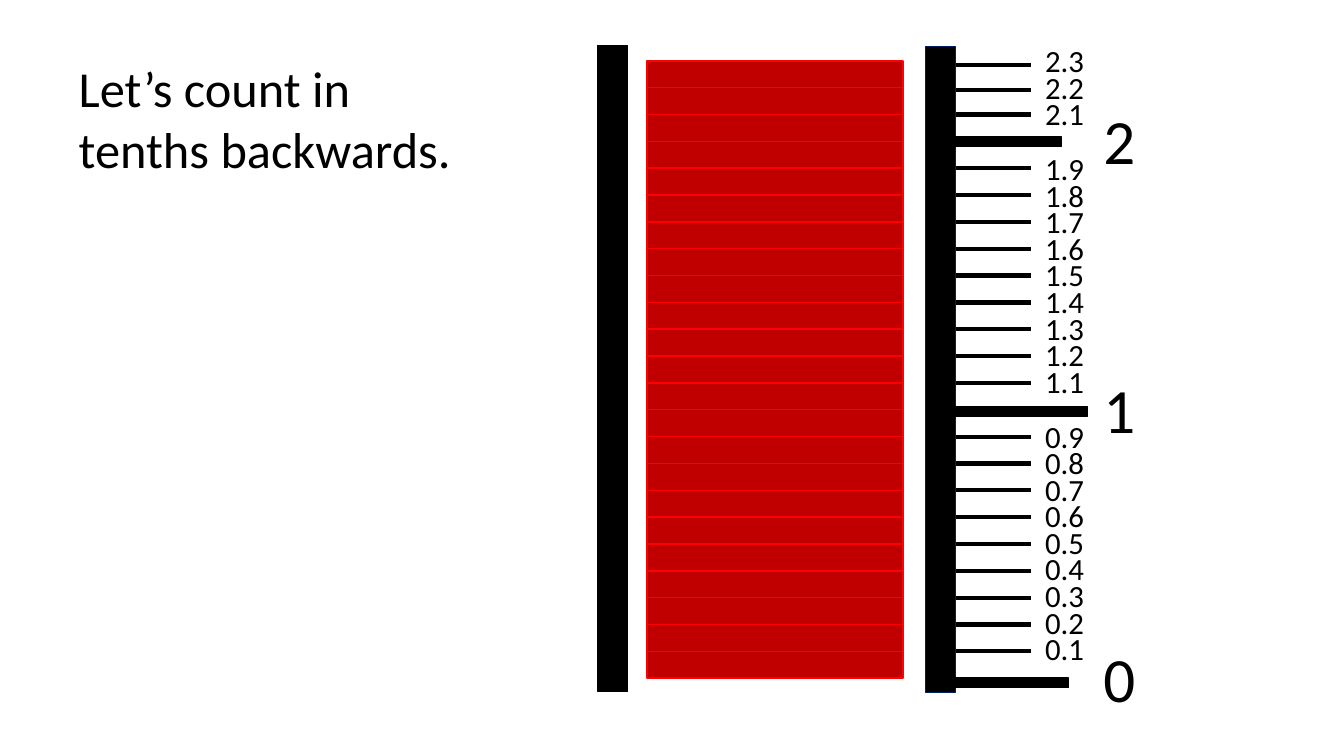
import pptx
import pptx.dml.color
import pptx.enum.shapes
import pptx.enum.text
import pptx.util
import lxml.etree

Cm = pptx.util.Cm
Pt = pptx.util.Pt
hex_color = pptx.dml.color.RGBColor.from_string


def write_text(box, text, size, font="Calibri", color="000000"):
    """Fill a box with left-aligned text, one paragraph for each line."""
    frame = box.text_frame
    frame.word_wrap = True
    frame.auto_size = pptx.enum.text.MSO_AUTO_SIZE.NONE
    frame.vertical_anchor = pptx.enum.text.MSO_ANCHOR.TOP
    for number, line in enumerate(text.split("\n")):
        para = frame.paragraphs[0] if number == 0 else frame.add_paragraph()
        para.alignment = pptx.enum.text.PP_ALIGN.LEFT
        span = para.add_run()
        span.text = line
        span.font.name = font
        span.font.size = Pt(size)
        span.font.color.rgb = hex_color(color)


def add_bar(left, top, width, height, fill="000000", line="000000"):
    """Add a filled rectangle, measured in centimetres."""
    bar = page.shapes.add_shape(pptx.enum.shapes.MSO_SHAPE.RECTANGLE,
                                Cm(left), Cm(top), Cm(width), Cm(height))
    bar.shadow.inherit = False
    bar.fill.solid()
    bar.fill.fore_color.rgb = hex_color(fill)
    bar.line.color.rgb = hex_color(line)
    bar.line.width = Pt(1)


deck = pptx.Presentation()
deck.slide_width = Cm(33.87)
deck.slide_height = Cm(19.05)
page = deck.slides.add_slide(deck.slide_layouts[5])

title = page.shapes.title
title.left, title.top, title.width, title.height = Cm(1.73), Cm(1.32), Cm(11.28), Cm(3.33)
write_text(title, "Let’s count in\ntenths backwards.", size=36)

# Scale: 23 tenths upwards from zero
zero = 17.09
tenths = 23
pitch = 14.88 / 22
top_shifts = {22: 0.06, 23: 0.1}

# Small ticks and their labels
for tenth in range(1, tenths + 1):
    whole, part = divmod(tenth, 10)
    if part == 0:
        continue
    tick_y = Cm(zero - tenth * pitch + top_shifts.get(tenth, 0))
    tick = page.shapes.add_connector(pptx.enum.shapes.MSO_CONNECTOR.STRAIGHT,
                                     Cm(23.35), tick_y, Cm(25.98), tick_y)
    tick.line.color.rgb = hex_color("000000")
    tick.line.width = Pt(3)
    lxml.etree.SubElement(tick.line._get_or_add_ln().getparent(),
                          pptx.oxml.ns.qn("a:effectLst"))
    label_top = 15.75 - whole * 6.74 - (part - 1) * 0.67
    label = page.shapes.add_textbox(Cm(26.09), Cm(label_top), Cm(1.87), Cm(1.19))
    write_text(label, f"{whole}.{part}", size=22)

# Two rails of the tube
add_bar(15.06, 1.14, 0.76, 16.28)
add_bar(23.32, 1.17, 0.76, 16.28, line="002060")

# Whole numbers: text, bar left, bar top, bar width, text top
for text, left, top, width, text_top in [
    ("2", 24.08, 3.45, 2.67, 2.44),
    ("1", 23.9, 10.25, 3.51, 9.22),
    ("0", 23.88, 17.09, 3.05, 15.98),
]:
    add_bar(left, top, width, 0.24)
    numeral = page.shapes.add_textbox(Cm(27.56), Cm(text_top), Cm(1.73), Cm(2.18))
    write_text(numeral, text, size=45)

# Red column, one slab for each tenth
for tenth in range(1, tenths + 1):
    add_bar(16.31, zero - tenth * pitch, 6.45, pitch, fill="C00000", line="FF0000")

deck.save("out.pptx")
